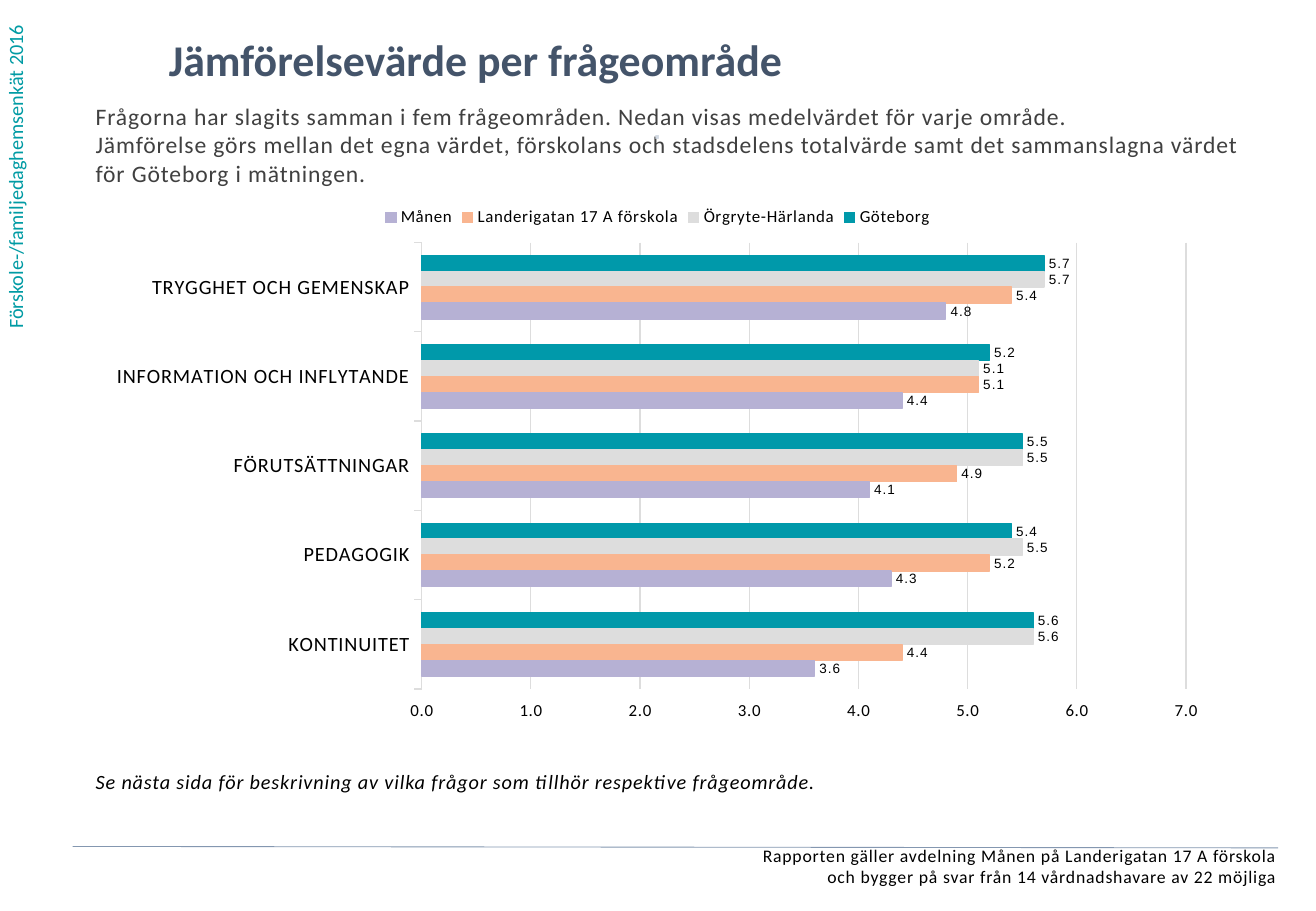
"""Builds the slide comparing mean survey values per question area."""
from lxml.etree import SubElement
from pptx import Presentation
from pptx.chart.data import CategoryChartData
from pptx.dml.color import RGBColor
from pptx.enum.chart import (XL_CHART_TYPE, XL_LABEL_POSITION,
                             XL_LEGEND_POSITION, XL_TICK_LABEL_POSITION,
                             XL_TICK_MARK)
from pptx.enum.shapes import MSO_CONNECTOR
from pptx.enum.text import PP_ALIGN
from pptx.oxml import parse_xml
from pptx.oxml.ns import nsdecls, qn
from pptx.util import Cm, Pt

TEAL = RGBColor(0x00, 0x99, 0xAA)
GREY = RGBColor(0xDD, 0xDD, 0xDD)
PEACH = RGBColor(0xF9, 0xB5, 0x90)
LILAC = RGBColor(0xB6, 0xB1, 0xD4)
SIDE_TEAL = RGBColor(0x00, 0x9B, 0xA4)
NAVY = RGBColor(0x44, 0x54, 0x6A)
DARK = RGBColor(0x40, 0x40, 0x40)
BLACK = RGBColor(0x00, 0x00, 0x00)
PALE = RGBColor(0xD2, 0xD9, 0xE2)
RULE = RGBColor(0x84, 0x97, 0xB0)

prs = Presentation()
prs.slide_width, prs.slide_height = Cm(27.51), Cm(19.05)
s = prs.slides.add_slide(prs.slide_layouts[6])


def add_text(box, text, size, color, spacing=50, align=PP_ALIGN.LEFT,
             bold=False, italic=False):
    """Add a borderless text box and return its text frame."""
    tf = s.shapes.add_textbox(*(Cm(v) for v in box)).text_frame
    tf.word_wrap = True
    tf.margin_left = tf.margin_right = tf.margin_top = tf.margin_bottom = 0
    tf.text = text
    for p in tf.paragraphs:
        p.alignment = align
        for r in p.runs:
            r.font.name, r.font.size = "Calibri", Pt(size)
            r.font.color.rgb = color
            r.font.bold, r.font.italic = bold, italic
            r.font._element.set("spc", str(spacing))
    return tf


side = add_text((0.06, 0.2, 0.7, 6.68), "Förskole-/familjedaghemsenkät 2016",
                12, SIDE_TEAL, spacing=0)
side._txBody.bodyPr.set("vert", "vert270")

add_text((3.53, 0.69, 21.18, 1.45), "Jämförelsevärde per frågeområde",
         26, NAVY, spacing=0, bold=True)
add_text((2, 2.13, 24.5, 2),
         "Frågorna har slagits samman i fem frågeområden. Nedan visas "
         "medelvärdet för varje område.\n"
         "Jämförelse görs mellan det egna värdet, förskolans och stadsdelens "
         "totalvärde samt det sammanslagna värdet för Göteborg i mätningen.",
         14, DARK)
add_text((9.83, 2.59, 7.82, 0.99), "⋅", 12, PALE,
         align=PP_ALIGN.CENTER, bold=True)
add_text((2, 16.09, 23.5, 0.7),
         "Se nästa sida för beskrivning av vilka frågor som tillhör "
         "respektive frågeområde.", 12, BLACK, italic=True)
add_text((0.3, 17.66, 26.39, 1.09),
         "Rapporten gäller avdelning Månen på Landerigatan 17 A förskola\n"
         "och bygger på svar från 14 vårdnadshavare av 22 möjliga",
         10.5, BLACK, align=PP_ALIGN.RIGHT)

series = [
    ("Göteborg", (5.7, 5.2, 5.5, 5.4, 5.6), TEAL),
    ("Örgryte-Härlanda", (5.7, 5.1, 5.5, 5.5, 5.6), GREY),
    ("Landerigatan 17 A förskola", (5.4, 5.1, 4.9, 5.2, 4.4), PEACH),
    ("Månen", (4.8, 4.4, 4.1, 4.3, 3.6), LILAC),
]
data = CategoryChartData(number_format="0.0")
data.categories = ["TRYGGHET OCH GEMENSKAP", "INFORMATION OCH INFLYTANDE",
                   "FÖRUTSÄTTNINGAR", "PEDAGOGIK", "KONTINUITET"]
for name, values, _ in series:
    data.add_series(name, values)
chart = s.shapes.add_chart(XL_CHART_TYPE.BAR_CLUSTERED, Cm(2), Cm(4.06),
                           Cm(23.5), Cm(11.25), data).chart
chart.has_title = False
chart.font.name, chart.font.size = "Calibri", Pt(10)
chart.font.color.rgb = BLACK
chart.has_legend = True
chart.legend.position = XL_LEGEND_POSITION.TOP
chart.legend.include_in_layout = False
chart.legend.font.size = Pt(10)

areas = chart.category_axis
areas.reverse_order = True
areas.major_tick_mark = XL_TICK_MARK.OUTSIDE
areas.tick_labels.font.size = Pt(12)

scale = chart.value_axis
scale.minimum_scale, scale.maximum_scale, scale.major_unit = 0, 7, 1
scale.major_tick_mark = XL_TICK_MARK.OUTSIDE
scale.tick_label_position = XL_TICK_LABEL_POSITION.HIGH
scale.tick_labels.number_format = "0.0"
scale.tick_labels.number_format_is_linked = False
scale.tick_labels.font.size = Pt(10)
scale.format.line.fill.background()
for line in (areas.format.line, scale.major_gridlines.format.line):
    line.color.rgb, line.width = GREY, Pt(0.75)

plot = chart.plots[0]
plot.gap_width, plot.overlap = 162, 0
plot.vary_by_categories = False
for ser, (_, _, color) in zip(plot.series, series):
    ser.format.fill.solid()
    ser.format.fill.fore_color.rgb = color
    ser.format.line.color.rgb, ser.format.line.width = color, Pt(0.75)
    labels = ser.data_labels
    labels.show_value = True
    labels.number_format, labels.number_format_is_linked = "0.0", False
    labels.position = XL_LABEL_POSITION.OUTSIDE_END
    labels.font.name, labels.font.size = "Arial", Pt(8)
    labels.font.color.rgb = BLACK

for props in chart._chartSpace.iter(qn("a:defRPr")):
    props.set("spc", "50")

area = chart._chartSpace.chart.plotArea
for old in area.findall(qn("c:layout")):
    area.remove(old)
layout = parse_xml(f"<c:layout {nsdecls('c')}><c:manualLayout/></c:layout>")
for tag, value in (("layoutTarget", "inner"), ("xMode", "edge"),
                   ("yMode", "edge"), ("x", "0.29"), ("y", "0.09"),
                   ("w", "0.68"), ("h", "0.83")):
    SubElement(layout[0], qn(f"c:{tag}")).set("val", value)
area.insert(0, layout)

rule = s.shapes.add_connector(MSO_CONNECTOR.STRAIGHT, Cm(1.52), Cm(17.7),
                              Cm(26.72), Cm(17.73))
rule.line.color.rgb, rule.line.width = RULE, Pt(0.5)
SubElement(rule._element.spPr, qn("a:effectLst"))

prs.save("out.pptx")
